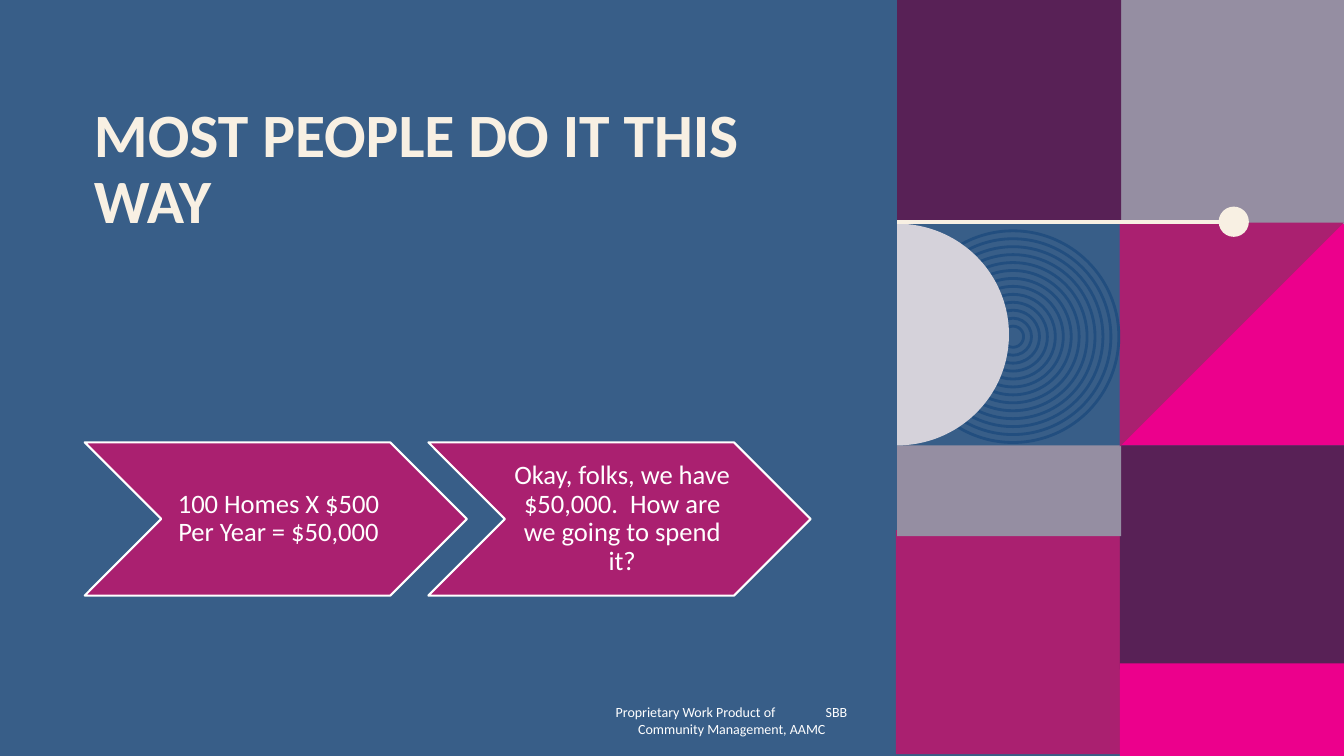
from dataclasses import dataclass
from math import cos, pi, sin

from lxml.etree import SubElement
from pptx import Presentation
from pptx.dml.color import RGBColor
from pptx.enum.shapes import MSO_CONNECTOR, MSO_SHAPE
from pptx.enum.text import MSO_ANCHOR, PP_ALIGN
from pptx.oxml.ns import qn
from pptx.util import Pt

BLUE, NAVY, PLUM, PINK = "385E88", "224E7F", "582156", "EC008C"
BERRY, GREY, PALE = "AA2070", "958EA2", "D5D2DA"
CREAM, WHITE = "F8F0E3", "FFFFFF"
LEFT, MID, TILE = 640.8, 800, 160


@dataclass
class Box:
    x: float
    y: float
    w: float
    h: float

    def emu(self) -> tuple:
        return Pt(self.x), Pt(self.y), Pt(self.w), Pt(self.h)


@dataclass
class Tile:
    box: Box
    fill: str


@dataclass
class Step:
    x: float
    text: str


TILES = [
    Tile(Box(MID, 158.4, TILE, TILE), PINK),
    Tile(Box(MID, 0, TILE, TILE), GREY),
    Tile(Box(LEFT, -0.5, TILE, TILE), PLUM),
    Tile(Box(640, 378.7, TILE, TILE), BERRY),
    Tile(Box(MID, 318.2, TILE, TILE), PLUM),
    Tile(Box(MID, 473.8, TILE, 66.2), PINK),
    Tile(Box(LEFT, 318.2, TILE, 64.8), GREY),
]
STEPS = [
    Step(60.5, "100 Homes X $500 Per Year = $50,000"),
    Step(306, "Okay, folks, we have $50,000.  How are we going to spend it?"),
]


def color(code: str) -> RGBColor:
    return RGBColor.from_string(code)


def style(shape, fill: str = "", line: str = "", width: float = 0) -> None:
    shape.shadow.inherit = False
    if fill:
        shape.fill.solid()
        shape.fill.fore_color.rgb = color(fill)
    else:
        shape.fill.background()
    if line:
        shape.line.color.rgb = color(line)
        shape.line.width = Pt(width)
    else:
        shape.line.fill.background()


def add(shapes, kind, box: Box, fill: str = "", line: str = "", width: float = 0) -> None:
    style(shapes.add_shape(kind, *box.emu()), fill, line, width)


def outline(shapes, dots: list, fill: str) -> None:
    """Draw a closed, filled shape through the given points."""
    pts = [(Pt(x), Pt(y)) for x, y in dots]
    form = shapes.build_freeform(*pts[0], scale=1.0)
    form.add_line_segments(pts[1:], close=True)
    style(form.convert_to_shape(), fill)


def frame(shapes, box: Box, anchor=MSO_ANCHOR.MIDDLE):
    area = shapes.add_textbox(*box.emu()).text_frame
    area.word_wrap = True
    area.vertical_anchor = anchor
    return area


def write(para, text: str, size: float, ink: str = WHITE, bold: bool = False) -> None:
    run = para.add_run()
    run.text = text
    font = run.font
    font.name, font.size, font.bold = "Calibri", Pt(size), bold
    font.color.rgb = color(ink)


def mosaic(shapes) -> None:
    for tile in TILES:
        add(shapes, MSO_SHAPE.RECTANGLE, tile.box, tile.fill)
    outline(shapes, [(960, 159), (MID, 319), (MID, 159)], BERRY)
    for i in range(13):
        size = 151.2 - 11.34 * i
        ring = Box(723.6 - size / 2, 240.5 - size / 2, size, size)
        add(shapes, MSO_SHAPE.OVAL, ring, line=NAVY, width=2)
    turns = [pi * i / 90 - pi / 2 for i in range(91)]
    arc = [(LEFT + 79.9 * cos(t), 239 + 79.2 * sin(t)) for t in turns]
    outline(shapes, arc, PALE)


def marker(shapes) -> None:
    """Draw the line that ends in a dot."""
    y = 158.4
    line = shapes.add_connector(MSO_CONNECTOR.STRAIGHT, Pt(LEFT), Pt(y), Pt(880.6), Pt(y))
    line.line.color.rgb = color(CREAM)
    line.line.width = Pt(3)
    SubElement(line._element.spPr, qn("a:effectLst"))
    add(shapes, MSO_SHAPE.OVAL, Box(870.5, 147.6, 21.6, 21.6), CREAM)


def chevron(shapes, step: Step) -> None:
    top, high = 316, 109.4
    add(shapes, MSO_SHAPE.CHEVRON, Box(step.x, top, 273, high), BERRY, WHITE, 1.5)
    area = frame(shapes, Box(step.x + 54.7, top, 163.6, high))
    area.margin_left = Pt(5.8)
    area.margin_right = area.margin_top = area.margin_bottom = Pt(2)
    para = area.paragraphs[0]
    para.alignment = PP_ALIGN.CENTER
    para.line_spacing = 0.9
    write(para, step.text, 19)


def footer(shapes) -> None:
    area = frame(shapes, Box(432.7, 500.4, 180, 28.8))
    para = area.paragraphs[0]
    para.alignment = PP_ALIGN.LEFT
    tabs = SubElement(para._p.get_or_add_pPr(), qn("a:tabLst"))
    SubElement(tabs, qn("a:tab"), pos=str(Pt(150)), algn="l")
    write(para, "Proprietary Work Product of\tSBB", 10)
    para = area.add_paragraph()
    para.alignment = PP_ALIGN.CENTER
    write(para, "Community Management, AAMC", 10)


def main() -> None:
    deck = Presentation()
    deck.slide_width, deck.slide_height = Pt(960), Pt(540)
    slide = deck.slides.add_slide(deck.slide_layouts[6])
    slide.background.fill.solid()
    slide.background.fill.fore_color.rgb = color(BLUE)
    shapes = slide.shapes
    mosaic(shapes)
    marker(shapes)
    title = frame(shapes, Box(60, 70.6, 519, 156), MSO_ANCHOR.TOP).paragraphs[0]
    title.line_spacing = 0.9
    write(title, "MOST PEOPLE DO IT THIS WAY", 44, CREAM, True)
    for step in STEPS:
        chevron(shapes, step)
    footer(shapes)
    deck.save("out.pptx")


if __name__ == "__main__":
    main()
